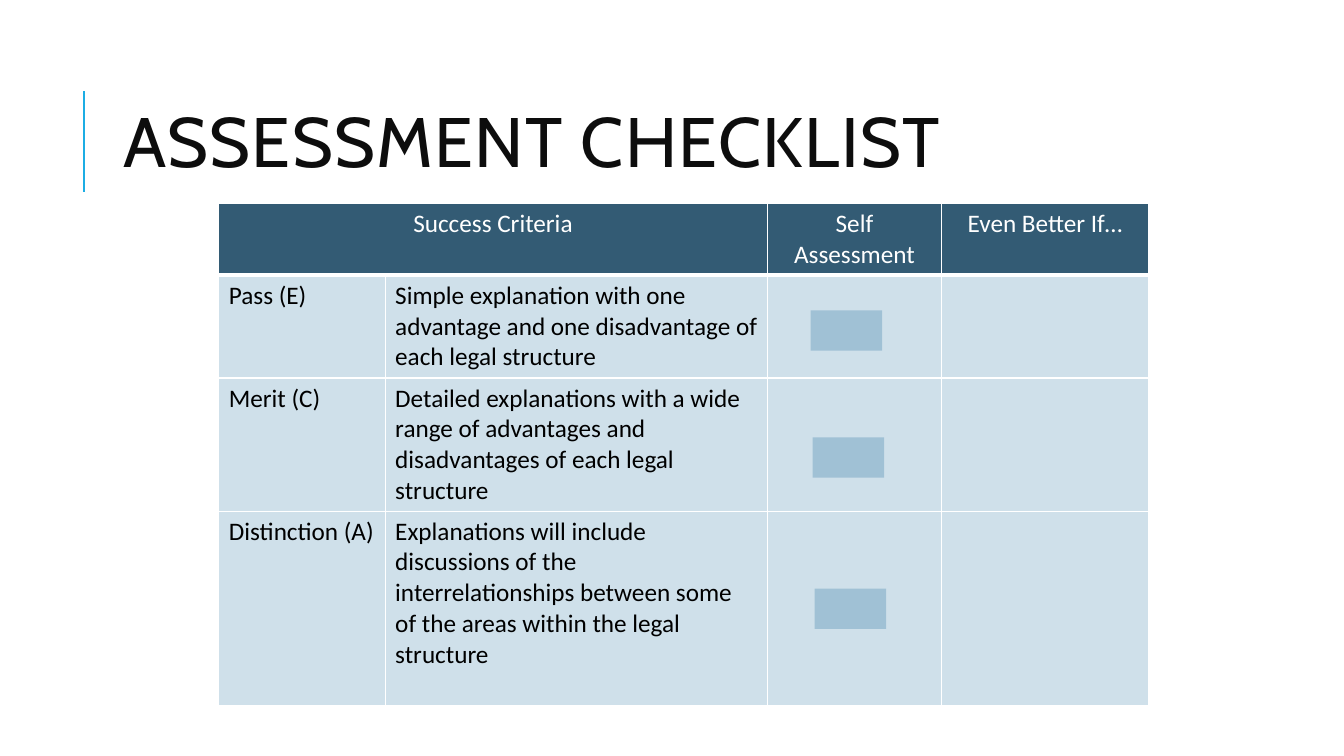
"""Build the assessment checklist slide."""
from lxml import etree
from pptx import Presentation
from pptx.dml.color import RGBColor
from pptx.enum.shapes import MSO_CONNECTOR, MSO_SHAPE
from pptx.enum.text import MSO_ANCHOR, MSO_AUTO_SIZE, PP_ALIGN
from pptx.oxml.ns import qn
from pptx.util import Inches, Pt

LINE, BOX = MSO_CONNECTOR.STRAIGHT, MSO_SHAPE.RECTANGLE
LEFT, CENTER = PP_ALIGN.LEFT, PP_ALIGN.CENTER

TITLE = "ASSESSMENT CHECKLIST"
HEADER = ["Success Criteria", "", "Self Assessment", "Even Better If…"]
CRITERIA = [
    ("Pass (E)", "Simple explanation with one advantage and one disadvantage "
                 "of each legal structure", "", ""),
    ("Merit (C)", "Detailed explanations with a wide range of advantages and "
                  "disadvantages of each legal structure", "", ""),
    ("Distinction (A)", "Explanations will include discussions of the "
                        "interrelationships between some of the areas within "
                        "the legal structure", "", ""),
]
COLUMNS = [1.65, 3.79, 1.73, 2.05]
ROWS = [0.7, 1.02, 1.32, 1.93]
TABLE_LEFT, TABLE_TOP = 2.17, 2.02
CHECKBOX_TOPS = [3.08, 4.34, 5.84]
CHECKBOX_LEFT, CHECKBOX_STEP = 8.04, 0.02
CHECKBOX_SIZE = Inches(0.71), Inches(0.4)


def color(value):
    return RGBColor.from_string(value)


def style(paragraph, font, size, ink, align):
    paragraph.alignment = align
    paragraph.font.name = font
    paragraph.font.size = Pt(size)
    paragraph.font.color.rgb = color(ink)


def add_borders(cell, bottom):
    properties = cell._tc.get_or_add_tcPr()
    widths = {"a:lnL": 1, "a:lnR": 1, "a:lnT": 1, "a:lnB": bottom}
    for index, (side, width) in enumerate(widths.items()):
        border = etree.Element(qn(side), w=str(Pt(width)))
        fill = etree.SubElement(border, qn("a:solidFill"))
        etree.SubElement(fill, qn("a:srgbClr"), val="FFFFFF")
        properties.insert(index, border)


def add_title(slide):
    title = slide.shapes.title
    title.left, title.top = Inches(1.12), Inches(0.64)
    title.width, title.height = Inches(10.63), Inches(1.64)
    frame = title.text_frame
    frame.text = TITLE
    frame.word_wrap = True
    frame.auto_size = MSO_AUTO_SIZE.NONE
    frame.vertical_anchor = MSO_ANCHOR.MIDDLE
    heading = frame.paragraphs[0]
    style(heading, "Cabin", 50, "0D0D0D", LEFT)
    heading.line_spacing = 0.8
    heading.runs[0].font._element.set("spc", "100")

    accent = slide.shapes.add_connector(
        LINE, Inches(0.83), Inches(1.9), Inches(0.83), Inches(0.9))
    accent.line.color.rgb = color("1CADE4")
    accent.line.width = Pt(1.5)
    etree.SubElement(accent._element.spPr, qn("a:effectLst"))


def add_checklist(slide):
    checklist = slide.shapes.add_table(
        len(ROWS), len(COLUMNS), Inches(TABLE_LEFT), Inches(TABLE_TOP),
        Inches(sum(COLUMNS)), Inches(sum(ROWS))).table
    for column, width in zip(checklist.columns, COLUMNS):
        column.width = Inches(width)
    for row, height in zip(checklist.rows, ROWS):
        row.height = Inches(height)
    for r, texts in enumerate([HEADER, *CRITERIA]):
        background, ink, align, bottom = (
            ("CFE0EA", "000000", LEFT, 1) if r else ("335B74", "FFFFFF", CENTER, 3))
        for c, text in enumerate(texts):
            cell = checklist.cell(r, c)
            cell.text = text
            style(cell.text_frame.paragraphs[0], "Calibri", 18, ink, align)
            cell.fill.solid()
            cell.fill.fore_color.rgb = color(background)
            add_borders(cell, bottom)
    checklist.cell(0, 0).merge(checklist.cell(0, 1))


def add_checkboxes(slide):
    for i, top in enumerate(CHECKBOX_TOPS):
        checkbox = slide.shapes.add_shape(
            BOX, Inches(CHECKBOX_LEFT + i * CHECKBOX_STEP), Inches(top), *CHECKBOX_SIZE)
        checkbox.shadow.inherit = False
        checkbox.fill.solid()
        checkbox.fill.fore_color.rgb = color("A0C1D5")
        checkbox.line.fill.background()


def main():
    deck = Presentation()
    deck.slide_width, deck.slide_height = Inches(13.33), Inches(7.5)
    slide = deck.slides.add_slide(deck.slide_layouts[5])
    add_title(slide)
    add_checklist(slide)
    add_checkboxes(slide)
    deck.save("out.pptx")


if __name__ == "__main__":
    main()
